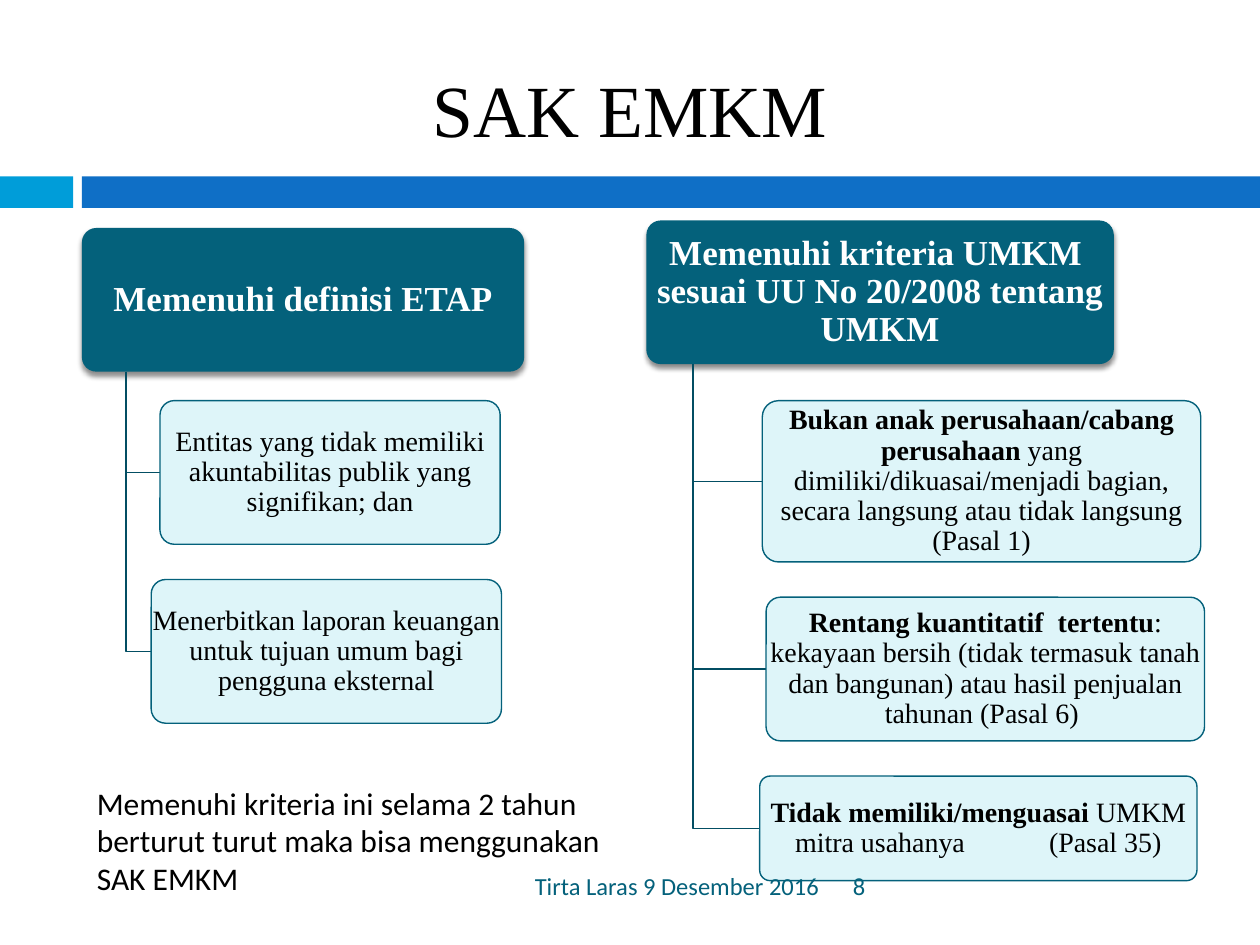
from lxml import etree
from pptx import Presentation
from pptx.dml.color import RGBColor
from pptx.enum.shapes import MSO_SHAPE
from pptx.enum.text import MSO_ANCHOR, PP_ALIGN
from pptx.oxml.ns import qn
from pptx.util import Inches, Pt

RECTANGLE, ROUNDED = MSO_SHAPE.RECTANGLE, MSO_SHAPE.ROUNDED_RECTANGLE
TOP, MIDDLE = MSO_ANCHOR.TOP, MSO_ANCHOR.MIDDLE
LEFT, CENTER, RIGHT = PP_ALIGN.LEFT, PP_ALIGN.CENTER, PP_ALIGN.RIGHT
SERIF, SANS = "Times New Roman", "Calibri"
COLORS = {
    "accent": "009DD9", "bar": "0F6FC6", "teal": "04617B", "branch": "034E63",
    "pale": "DBF5F9", "white": "FFFFFF", "black": "000000",
}
WIDE_SPACE = 44

ETAP = {
    "header": ("Memenuhi definisi ETAP", (0.65, 1.81, 3.51, 1.14)),
    "trunk": 1.0,
    "criteria": [
        ([("Entitas yang tidak memiliki akuntabilitas publik yang signifikan; dan", False, 0)],
         (1.27, 3.18, 2.7, 1.14)),
        ([("Menerbitkan laporan keuangan untuk tujuan umum bagi pengguna eksternal", False, 0)],
         (1.2, 4.6, 2.78, 1.14)),
    ],
}
UMKM = {
    "header": ("Memenuhi kriteria UMKM \vsesuai UU No 20/2008 tentang UMKM",
               (5.13, 1.75, 3.71, 1.14)),
    "trunk": 5.5,
    "criteria": [
        ([("Bukan anak perusahaan/cabang perusahaan ", True, 0),
          ("yang dimiliki/dikuasai/menjadi bagian, secara langsung atau tidak langsung (Pasal 1)",
           False, 0)],
         (6.05, 3.18, 3.48, 1.28)),
        ([("Rentang kuantitatif  tertentu", True, 0),
          (": kekayaan bersih (tidak termasuk tanah dan bangunan) atau hasil penjualan "
           "tahunan (Pasal 6) ", False, 0)],
         (6.08, 4.74, 3.48, 1.14)),
        ([("Tidak memiliki/menguasai ", True, 0), ("UMKM mitra usahanya", False, 0),
          (" ", False, WIDE_SPACE), ("(Pasal 35)", False, 0)],
         (6.03, 6.16, 3.47, 0.83)),
    ],
}


def rgb(name):
    """Return the named colour."""
    return RGBColor.from_string(COLORS[name])


def inches(box):
    """Convert a box of plain numbers to lengths."""
    return [Inches(value) for value in box]


def style(para, size, face, color, align=LEFT, bold=None):
    """Format one paragraph."""
    para.alignment = align
    para.font.size = Pt(size)
    para.font.name = face
    para.font.color.rgb = rgb(color)
    para.font.bold = bold


def add_text(page, box, text, size, face, color, align=LEFT, anchor=MIDDLE,
             bold=None, margins=(0.1, 0.05)):
    """Add a wrapped text box and return its paragraph."""
    frame = page.shapes.add_textbox(*inches(box)).text_frame
    frame.word_wrap = True
    frame.vertical_anchor = anchor
    frame.margin_left = frame.margin_right = Inches(margins[0])
    frame.margin_top = frame.margin_bottom = Inches(margins[1])
    para = frame.paragraphs[0]
    para.text = text
    style(para, size, face, color, align, bold)
    return para


def add_block(page, kind, box, fill):
    """Add a plain filled shape."""
    block = page.shapes.add_shape(kind, *inches(box))
    block.shadow.inherit = False
    block.fill.solid()
    block.fill.fore_color.rgb = rgb(fill)
    block.line.fill.background()
    if kind == ROUNDED:
        block.adjustments[0] = 0.1
    return block


def set_alpha(color, percent):
    """Give a colour element an opacity."""
    etree.SubElement(color, qn("a:alpha"), val=str(percent * 1000))


def add_header(page, box, text):
    """Add a dark header card with a soft shadow below it."""
    card = add_block(page, ROUNDED, box, "teal")
    effects = card._element.spPr.find(qn("a:effectLst"))
    shadow = etree.SubElement(effects, qn("a:outerShdw"), blurRad=str(Pt(3)),
                              dist=str(Pt(2.4)), dir="5400000", rotWithShape="0")
    set_alpha(etree.SubElement(shadow, qn("a:srgbClr"), val=COLORS["black"]), 45)
    para = add_text(page, box, text, 20, SERIF, "white", CENTER, bold=True,
                    margins=(0.04, 0.03))
    para.line_spacing = 0.9


def add_branch(page, trunk, top, box):
    """Draw an elbow from the trunk to the left side of a criterion."""
    left, upper, _, height = box
    middle = upper + height / 2
    start, *turns = [inches(point) for point in
                     ((trunk, top), (trunk, middle), (left, middle))]
    builder = page.shapes.build_freeform(*start)
    builder.add_line_segments(turns, close=False)
    branch = builder.convert_to_shape()
    branch.shadow.inherit = False
    branch.fill.background()
    branch.line.color.rgb = rgb("branch")
    branch.line.width = Pt(0.79)


def add_criterion(page, box, spans):
    """Add a pale outlined card with its text."""
    card = add_block(page, ROUNDED, box, "pale")
    set_alpha(card._element.spPr.find(qn("a:solidFill"))[0], 90)
    card.line.color.rgb = rgb("teal")
    card.line.width = Pt(0.79)
    para = add_text(page, box, "", 16, SERIF, "black", CENTER, margins=(0, 0.02))
    para.line_spacing = 0.9
    for text, bold, spacing in spans:
        span = para.add_run()
        span.text = text
        span.font.bold = bold
        if spacing:
            span._r.get_or_add_rPr().set("spc", str(spacing * 100))


def add_tree(page, tree):
    """Add a header with its criteria hanging from one trunk."""
    text, box = tree["header"]
    add_header(page, box, text)
    for spans, place in tree["criteria"]:
        add_branch(page, tree["trunk"], box[1] + box[3], place)
        add_criterion(page, place, spans)


def add_title(page, box, text):
    """Move and format the title placeholder."""
    title = page.shapes.title
    title.left, title.top, title.width, title.height = inches(box)
    title.text_frame.text = text
    title.text_frame.vertical_anchor = MIDDLE
    style(title.text_frame.paragraphs[0], 42, SERIF, "black", CENTER)


def add_band(page, top, height):
    """Add the two-part band below the title."""
    add_block(page, RECTANGLE, (0, top, 0.58, height), "accent")
    add_block(page, RECTANGLE, (0.65, top, 9.35, height), "bar")


def add_footer(page, top, height):
    """Add the event line and the page number."""
    add_text(page, (6.67, top, 2.92, height), "8", 14, SANS, "teal")
    add_text(page, (0.67, top, 5.93, height), "Tirta Laras 9 Desember 2016",
             14, SANS, "teal", RIGHT)


def main():
    """Build and save the deck."""
    deck = Presentation()
    deck.slide_width, deck.slide_height = Inches(10), Inches(7.5)
    page = deck.slides.add_slide(deck.slide_layouts[5])
    add_band(page, 1.4, 0.25)
    add_title(page, (1, 0.42, 8, 0.87), "SAK EMKM")
    for tree in (ETAP, UMKM):
        add_tree(page, tree)
    add_text(page, (0.67, 6.17, 4.33, 1.01),
             "Memenuhi kriteria ini selama 2 tahun berturut turut maka bisa "
             "menggunakan SAK EMKM", 18, SANS, "black", anchor=TOP)
    add_footer(page, 6.83, 0.4)
    deck.save("out.pptx")


if __name__ == "__main__":
    main()
